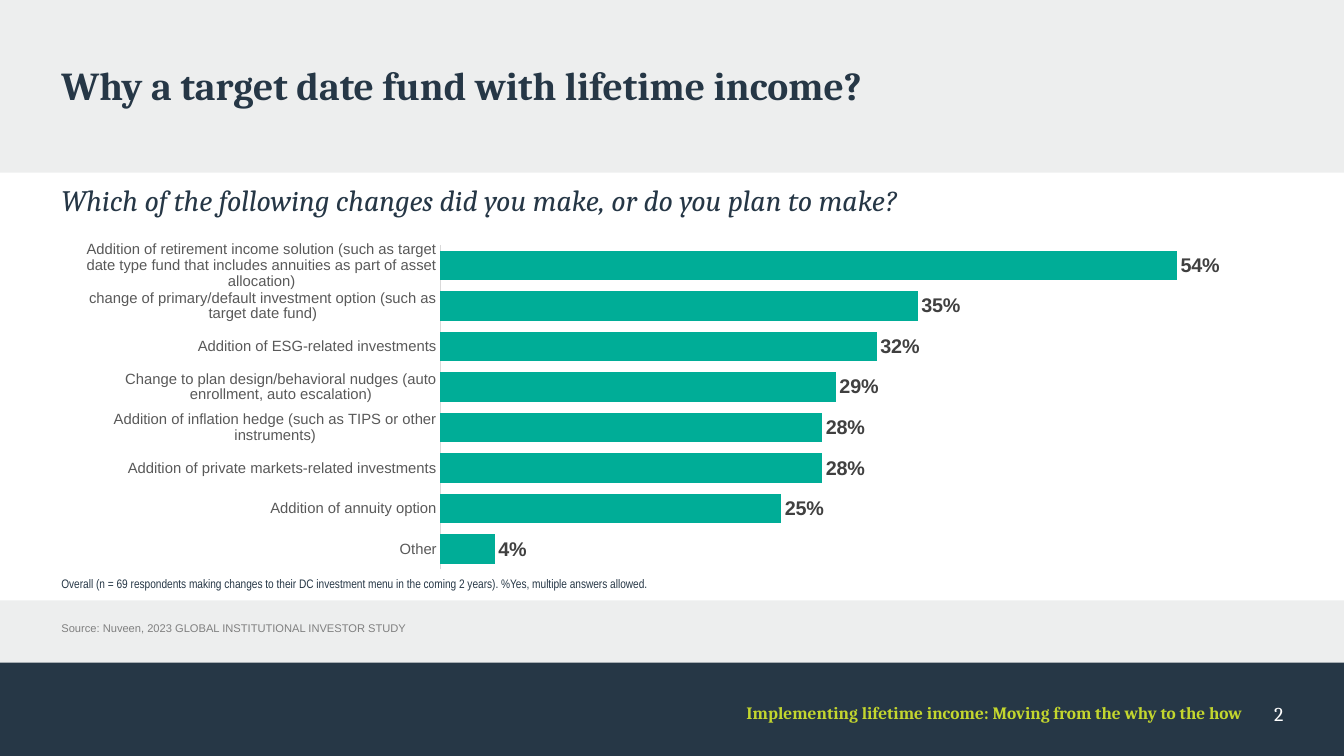
from lxml import etree
from pptx import Presentation
from pptx.chart.data import CategoryChartData
from pptx.dml.color import RGBColor
from pptx.enum import chart as chart_enum, shapes, text
from pptx.oxml import parse_xml
from pptx.oxml.ns import nsdecls
from pptx.util import Inches, Pt

WIDTH, HEIGHT = 15.11, 8.5
MARGIN, CONTENT_WIDTH = 0.69, 13.74
NAVY, WHITE, PALE, LIME, TEAL = "263746", "FFFFFF", "EDEEEE", "C3D62E", "00AD97"

# top, height, colour of each full-width band
BANDS = [(1.94, 4.81, WHITE), (7.45, 1.05, NAVY)]

# text, (left, top, width, height), size, font, colour, styles
TEXTS = [
    ("Why a target date fund with lifetime income?",
     (MARGIN, 0.69, CONTENT_WIDTH, 1.13), 32, "Cambria", NAVY, {"bold"}),
    ("Which of the following changes did you make, or do you plan to make?",
     (MARGIN, 2.04, CONTENT_WIDTH, 0.54), 24, "Cambria", NAVY, {"italic"}),
    ("Overall (n = 69 respondents making changes to their DC investment menu "
     "in the coming 2 years). %Yes, multiple answers allowed.",
     (MARGIN, 6.48, CONTENT_WIDTH, 0.27), 10, "Arial Narrow", NAVY, set()),
    ("Source: Nuveen, 2023 GLOBAL INSTITUTIONAL INVESTOR STUDY",
     (MARGIN, 6.99, 6.62, 0.3), 9, "Arial", "808080", set()),
    ("Implementing lifetime income: Moving from the why to the how",
     (5.64, 7.89, 8.33, 0.29), 14, "Cambria", LIME, {"bold", "right"}),
    ("2", (14.03, 7.89, 0.4, 0.33), 16, "Cambria", WHITE, {"right"}),
]

# listed from the top bar down
CHANGES = [
    ("Addition of retirement income solution (such as target date type fund "
     "that includes annuities as part of asset allocation)", 54),
    ("change of primary/default investment option (such as target date fund)", 35),
    ("Addition of ESG-related investments", 32),
    ("Change to plan design/behavioral nudges (auto enrollment, auto escalation)", 29),
    ("Addition of inflation hedge (such as TIPS or other instruments)", 28),
    ("Addition of private markets-related investments", 28),
    ("Addition of annuity option", 25),
    ("Other", 4),
]
CHART_BOX = (MARGIN, 2.64, CONTENT_WIDTH, 3.84)
PLOT_AREA = {"x": 0.31, "y": 0.03, "w": 0.67, "h": 0.95}  # shares of the chart


def rgb(value):
    return RGBColor.from_string(value)


def set_font(font, size, name, color, bold=False, italic=False):
    font.size, font.name = Pt(size), name
    font.bold, font.italic = bold, italic
    font.color.rgb = rgb(color)


def add_band(slide, top, height, color):
    shape = slide.shapes.add_shape(shapes.MSO_SHAPE.RECTANGLE, 0, Inches(top),
                                   Inches(WIDTH), Inches(height))
    shape.shadow.inherit = False
    shape.fill.solid()
    shape.fill.fore_color.rgb = rgb(color)
    shape.line.fill.background()


def add_text(slide, words, box, size, font, color, styles):
    frame = slide.shapes.add_textbox(*map(Inches, box)).text_frame
    frame.word_wrap = True
    frame.margin_left = frame.margin_top = frame.margin_right = frame.margin_bottom = 0
    paragraph = frame.paragraphs[0]
    paragraph.text = words
    paragraph.alignment = text.PP_ALIGN.RIGHT if "right" in styles else text.PP_ALIGN.LEFT
    set_font(paragraph.font, size, font, color, "bold" in styles, "italic" in styles)


def fix_plot_area(chart):
    """Pin the inner plot area, leaving room for the wrapped category labels."""
    plot_area = chart.plots[0]._element.getparent() if hasattr(chart.plots[0], "_element") \
        else chart.element.chart.plotArea
    for layout in plot_area.xpath("c:layout"):
        plot_area.remove(layout)
    layout = parse_xml(f'<c:layout {nsdecls("c")}><c:manualLayout/></c:layout>')
    settings = [("layoutTarget", "inner"), ("xMode", "edge"), ("yMode", "edge"),
                *PLOT_AREA.items()]
    namespace = etree.QName(layout).namespace
    for name, value in settings:
        etree.SubElement(layout[0], f"{{{namespace}}}{name}").set("val", str(value))
    plot_area.insert(0, layout)


def add_changes_chart(slide):
    data = CategoryChartData()
    names, values = zip(*reversed(CHANGES))
    data.categories = names
    data.add_series("Series 1", values)
    chart = slide.shapes.add_chart(chart_enum.XL_CHART_TYPE.BAR_CLUSTERED,
                                   *map(Inches, CHART_BOX), data).chart
    chart.has_legend = chart.has_title = False
    set_font(chart.font, 12, "Cambria", "000000")

    categories = chart.category_axis
    categories.major_tick_mark = categories.minor_tick_mark = chart_enum.XL_TICK_MARK.NONE
    categories.has_major_gridlines = False
    set_font(categories.tick_labels.font, 12, "Arial", "595959")
    categories.format.line.color.rgb = rgb("D9D9D9")
    categories.format.line.width = Pt(0.75)

    chart.value_axis.minimum_scale, chart.value_axis.maximum_scale = 0, 60
    chart.value_axis.has_major_gridlines = False
    chart.value_axis.visible = False

    plot = chart.plots[0]
    plot.gap_width = 38
    plot.vary_by_categories = False
    bars = plot.series[0]
    bars.format.fill.solid()
    bars.format.fill.fore_color.rgb = rgb(TEAL)
    labels = bars.data_labels
    labels.show_value = True
    labels.number_format, labels.number_format_is_linked = '#,##0"%"', False
    labels.position = chart_enum.XL_LABEL_POSITION.OUTSIDE_END
    set_font(labels.font, 16, "Arial", "404040", bold=True)
    fix_plot_area(chart)


def main():
    presentation = Presentation()
    presentation.slide_width, presentation.slide_height = Inches(WIDTH), Inches(HEIGHT)
    slide = presentation.slides.add_slide(presentation.slide_layouts[6])
    slide.background.fill.solid()
    slide.background.fill.fore_color.rgb = rgb(PALE)
    for band in BANDS:
        add_band(slide, *band)
    add_changes_chart(slide)
    for item in TEXTS:
        add_text(slide, *item)
    presentation.save("out.pptx")


if __name__ == "__main__":
    main()
